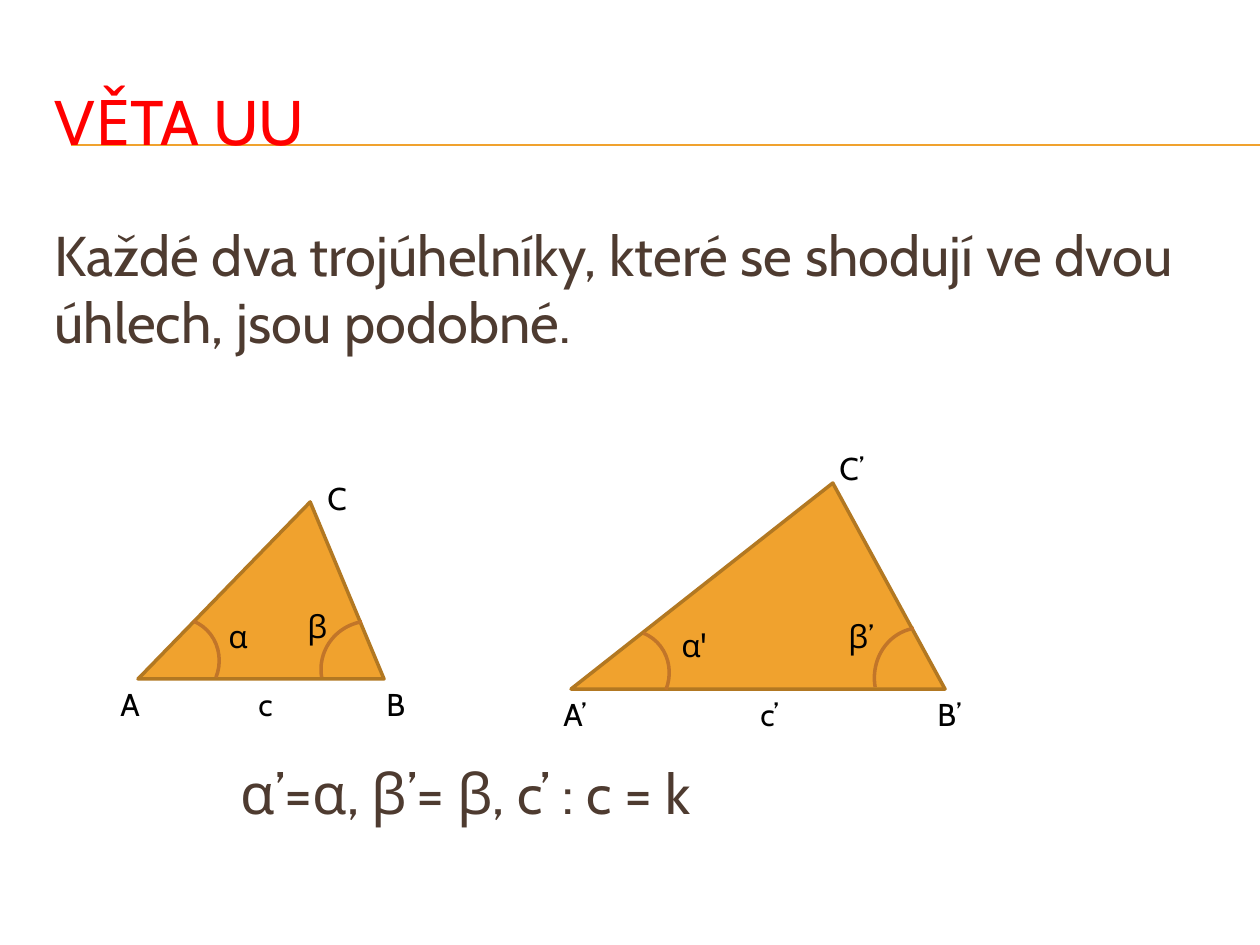
import itertools
import pptx
import pptx.util
import pptx.dml.color
import pptx.enum.lang
import pptx.enum.shapes
import pptx.enum.text
import pptx.oxml.ns
import lxml.etree

HUES = {
    "title": "FF0000",
    "body": "4E3B30",
    "label": "000000",
    "rule": "F0A22E",
    "fill": "F0A22E",
    "edge": "B27822",
    "arc": "C17529",
}
FONT = "Cabin"
SCALE = 914400 / 126
KINDS = pptx.enum.shapes.MSO_SHAPE
FIT = pptx.enum.text.MSO_AUTO_SIZE
TONGUE = pptx.enum.lang.MSO_LANGUAGE_ID


def px(num):
    return pptx.util.Emu(round(num * SCALE))


def hue(name):
    return pptx.dml.color.RGBColor.from_string(HUES[name])


def place(shape, box):
    shape.left, shape.top, shape.width, shape.height = map(px, box)


def is_greek(sign):
    return "α" <= sign <= "ω"


def write(para, text, size, name):
    for greek, signs in itertools.groupby(text, is_greek):
        run = para.add_run()
        run.text = "".join(signs)
        run.font.name = FONT
        run.font.size = pptx.util.Pt(size)
        run.font.color.rgb = hue(name)
        run.font.language_id = TONGUE.GREEK if greek else TONGUE.CZECH


def draw_rules(slide, box):
    left, top, wide, count = box
    for row in range(count):
        rule = slide.shapes.add_connector(
            pptx.enum.shapes.MSO_CONNECTOR.STRAIGHT,
            px(left), px(top), px(left + wide), px(top))
        rule.line.color.rgb = hue("rule")
        rule.line.width = pptx.util.Pt(0.75)
        props = rule._element.spPr
        lxml.etree.SubElement(props, pptx.oxml.ns.qn("a:effectLst"))
        slide.shapes._spTree.insert(2 + row, rule._element)


def fill_title(slide, box):
    title = slide.shapes.title
    place(title, box)
    frame = title.text_frame
    frame.auto_size = FIT.NONE
    frame.vertical_anchor = pptx.enum.text.MSO_ANCHOR.MIDDLE
    para = frame.paragraphs[0]
    para.alignment = pptx.enum.text.PP_ALIGN.LEFT
    write(para, "VĚTA UU", 36, "title")


def fill_body(slide, box):
    body = slide.placeholders[1]
    place(body, box)
    frame = body.text_frame
    frame.auto_size = FIT.NONE
    lines = (
        ("Každé dva trojúhelníky, které se shodují ve dvou úhlech, jsou podobné.", 0, 0),
        ("α’=α, β’= β, c’ : c = k", 186, 231),
    )
    for num, (text, inset, space) in enumerate(lines):
        para = frame.add_paragraph() if num else frame.paragraphs[0]
        para.space_before = pptx.util.Pt(space)
        props = para._p.get_or_add_pPr()
        props.set("marL", str(px(inset)))
        props.set("indent", "0")
        lxml.etree.SubElement(props, pptx.oxml.ns.qn("a:buNone"))
        write(para, text, 32, "body")


def add_form(slide, kind, box, edge):
    form = slide.shapes.add_shape(kind, *map(px, box))
    form.shadow.inherit = False
    form.line.color.rgb = hue(edge)
    form.line.width = pptx.util.Pt(2)
    return form


def draw_figure(slide, box, labels, arcs):
    left, top = box[:2]
    body = add_form(slide, KINDS.ISOSCELES_TRIANGLE, box, "edge")
    body.adjustments[0] = 0.7
    body.fill.solid()
    body.fill.fore_color.rgb = hue("fill")
    for x, y, wide, high, turn in arcs:
        arc = add_form(slide, KINDS.ARC, (left + x, top + y, wide, high), "arc")
        arc.fill.background()
        arc.rotation = turn
    for text, x, y, wide in labels:
        note = slide.shapes.add_textbox(*map(px, (left + x, top + y, wide, 50)))
        frame = note.text_frame
        frame.word_wrap = True
        frame.auto_size = FIT.SHAPE_TO_FIT_TEXT
        write(frame.paragraphs[0], text, 18, "label")


def main():
    deck = pptx.Presentation()
    deck.slide_width, deck.slide_height = px(1260), px(945)
    slide = deck.slides.add_slide(deck.slide_layouts[1])
    draw_rules(slide, (71, 145, 1189, 2))
    fill_title(slide, (42, 62, 1197, 116))
    fill_body(slide, (42, 214, 1197, 682))
    draw_figure(
        slide, (138, 502, 246, 177),
        (("A", -30, 177, 49), ("B", 236, 177, 49), ("C", 177, -29, 49),
         ("c", 108, 177, 69), ("α", 78, 109, 69), ("β", 157, 99, 69)),
        ((-3, 116, 84, 88, 21.8), (184, 118, 96, 98, 260.4)))
    draw_figure(
        slide, (571, 483, 374, 206),
        (("A’", -20, 206, 69), ("B’", 354, 206, 69), ("C’", 256, -40, 69),
         ("c’", 177, 206, 69), ("α'", 98, 137, 69), ("β’", 265, 128, 69)),
        ((14, 147, 84, 88, 21.8), (300, 148, 103, 96, 260.4)))
    deck.save("out.pptx")


if __name__ == "__main__":
    main()
